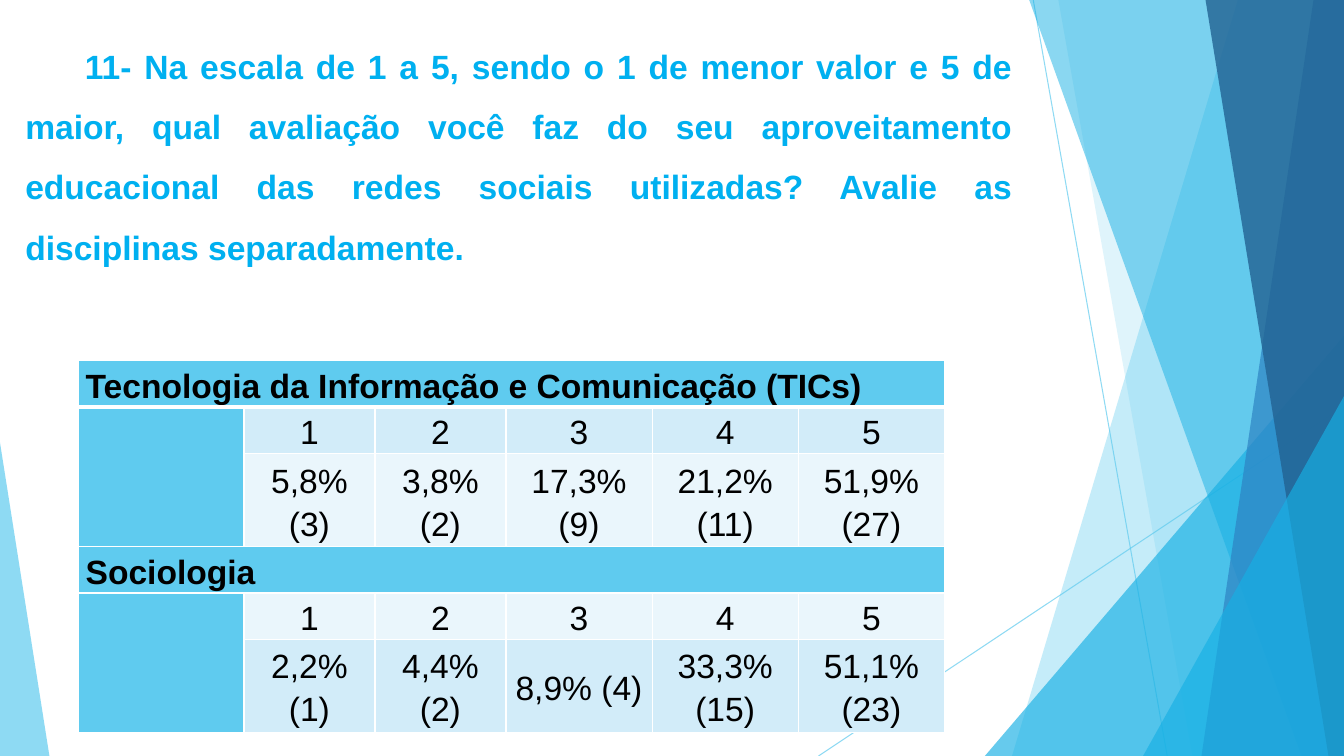
from dataclasses import dataclass

from lxml import etree
from pptx import Presentation
from pptx.dml.color import RGBColor
from pptx.enum.shapes import MSO_CONNECTOR, MSO_SHAPE
from pptx.enum.text import MSO_ANCHOR, MSO_AUTO_SIZE, PP_ALIGN
from pptx.oxml.ns import qn
from pptx.util import Emu, Inches, Pt

TRIANGLE = MSO_SHAPE.ISOSCELES_TRIANGLE
STRAIGHT = MSO_CONNECTOR.STRAIGHT
TOP, MIDDLE = MSO_ANCHOR.TOP, MSO_ANCHOR.MIDDLE
GROW = MSO_AUTO_SIZE.SHAPE_TO_FIT_TEXT
LEFT, CENTER, JUSTIFY = PP_ALIGN.LEFT, PP_ALIGN.CENTER, PP_ALIGN.JUSTIFY

WIDTH, HEIGHT = Inches(13.333), Inches(7.5)
TITLE_ONLY = 5


@dataclass(frozen=True)
class Theme:
    font: str = "Arial"
    size: int = 24
    title: str = "00B0F0"
    text: str = "000000"
    sky: str = "5FCBEF"
    cyan: str = "17B0E4"
    blue: str = "2E83C3"
    navy: str = "226292"
    band_dark: str = "D2ECF9"
    band_light: str = "EAF6FC"
    border: str = "FFFFFF"


THEME = Theme()


# All positions below are percentages of the slide's width and height.
@dataclass(frozen=True)
class Ray:
    x1: float
    y1: float
    x2: float
    y2: float


@dataclass(frozen=True)
class Panel:
    """Full-height panel that reaches the right edge."""
    top_x: float
    bottom_x: float
    color: str
    opacity: int


@dataclass(frozen=True)
class Corner:
    """Triangle standing on the bottom edge; apex 0 is left, 1 is right."""
    left: float
    top: float
    width: float
    apex: int
    color: str
    opacity: int


@dataclass(frozen=True)
class Survey:
    subject: str
    answers: tuple[str, ...]
    scale_fill: str
    answer_fill: str


RAYS = [Ray(76.88, 0, 86.85, 100), Ray(100, 53.73, 60.9, 100)]
BACKDROP = [
    Panel(92.1, 75.3, THEME.sky, 36),
    Panel(78.75, 88.73, THEME.sky, 20),
    Corner(73.28, 44.4, 26.72, 1, THEME.cyan, 66),
    Panel(76.58, 96.83, THEME.cyan, 50),
    Panel(97.73, 89.4, THEME.blue, 70),
    Panel(89.7, 98.85, THEME.navy, 80),
    Corner(85.05, 52.4, 14.95, 1, THEME.cyan, 66),
    Corner(0, 58.53, 3.68, 0, THEME.sky, 70),
]
QUESTION = (
    "11- Na escala de 1 a 5, sendo o 1 de menor valor e 5 de maior, qual avaliação "
    "você faz do seu aproveitamento educacional das redes sociais utilizadas? "
    "Avalie as disciplinas separadamente."
)
SURVEYS = [
    Survey("Tecnologia da Informação e Comunicação (TICs)",
           ("5,8% (3)", "3,8% (2)", "17,3% (9)", "21,2% (11)", "51,9% (27)"),
           THEME.band_dark, THEME.band_light),
    Survey("Sociologia",
           ("2,2% (1)", "4,4% (2)", "8,9% (4)", "33,3% (15)", "51,1% (23)"),
           THEME.band_light, THEME.band_dark),
]
COLUMNS = [12.3, 9.75, 9.75, 10.88, 10.88, 10.88]
SURVEY_ROWS = [6.1, 6.1, 12.3]


def across(percent: float) -> Emu:
    return Emu(round(WIDTH * percent / 100))


def down(percent: float) -> Emu:
    return Emu(round(HEIGHT * percent / 100))


def set_opacity(shape, percent: int) -> None:
    for color in shape.element.spPr.iter(qn("a:srgbClr")):
        etree.SubElement(color, qn("a:alpha")).set("val", str(percent * 1000))


def draw_ray(slide, ray: Ray) -> None:
    line = slide.shapes.add_connector(
        STRAIGHT, across(ray.x1), down(ray.y1), across(ray.x2), down(ray.y2))
    line.line.color.rgb = RGBColor.from_string(THEME.sky)
    line.line.width = Pt(0.75)
    set_opacity(line, 70)
    etree.SubElement(line.element.spPr, qn("a:effectLst"))


def draw_backdrop(slide, part: Panel | Corner) -> None:
    if isinstance(part, Panel):
        builder = slide.shapes.build_freeform(across(part.top_x), 0)
        builder.add_line_segments(
            [(WIDTH, 0), (WIDTH, HEIGHT), (across(part.bottom_x), HEIGHT)])
        shape = builder.convert_to_shape()
    else:
        shape = slide.shapes.add_shape(
            TRIANGLE, across(part.left), down(part.top),
            across(part.width), down(100 - part.top))
        shape.adjustments[0] = part.apex
    shape.shadow.inherit = False
    shape.fill.solid()
    shape.fill.fore_color.rgb = RGBColor.from_string(part.color)
    shape.line.fill.background()
    set_opacity(shape, part.opacity)


def write(paragraph, text: str, color: str, bold: bool, align, spacing: float) -> None:
    paragraph.alignment = align
    paragraph.line_spacing = spacing
    run = paragraph.add_run()
    run.text = text
    run.font.name, run.font.size, run.font.bold = THEME.font, Pt(THEME.size), bold
    run.font.color.rgb = RGBColor.from_string(color)


def draw_title(slide) -> None:
    title = slide.shapes.title
    title.left, title.top = across(1.13), down(2.67)
    title.width, title.height = across(74.93), down(33.6)
    frame = title.text_frame
    frame.word_wrap, frame.auto_size, frame.vertical_anchor = True, GROW, TOP
    paragraph = frame.paragraphs[0]
    write(paragraph, QUESTION, THEME.title, True, JUSTIFY, 1.5)
    properties = paragraph._p.get_or_add_pPr()
    properties.set("marL", "0")
    properties.set("indent", str(Inches(0.59)))


def style_cell(cell, fill: str, top: int, bottom: int) -> None:
    cell.fill.solid()
    cell.fill.fore_color.rgb = RGBColor.from_string(fill)
    cell.vertical_anchor = MIDDLE
    cell.margin_left = cell.margin_right = Inches(0.07)
    cell.margin_top = cell.margin_bottom = 0
    properties = cell._tc.get_or_add_tcPr()
    widths = {"a:lnL": 1, "a:lnR": 1, "a:lnT": top, "a:lnB": bottom}
    for index, (side, width) in enumerate(widths.items()):
        border = etree.Element(qn(side), w=str(Pt(width)))
        solid = etree.SubElement(border, qn("a:solidFill"))
        etree.SubElement(solid, qn("a:srgbClr")).set("val", THEME.border)
        properties.insert(index, border)


def draw_table(slide) -> None:
    heights = SURVEY_ROWS * len(SURVEYS)
    table = slide.shapes.add_table(
        len(heights), len(COLUMNS), across(5.85), down(47.73),
        across(sum(COLUMNS)), down(sum(heights))).table
    table.first_row = table.horz_banding = False
    for column, width in zip(table.columns, COLUMNS):
        column.width = across(width)
    for row, height in zip(table.rows, heights):
        row.height = down(height)

    for number, survey in enumerate(SURVEYS):
        first = number * len(SURVEY_ROWS)
        last_column = len(COLUMNS) - 1
        fills = (THEME.sky, survey.scale_fill, survey.answer_fill)
        for offset, fill in enumerate(fills):
            row = first + offset
            for column in range(len(COLUMNS)):
                style_cell(table.cell(row, column), fill if column else THEME.sky,
                           top=3 if row == 1 else 1, bottom=3 if row == 0 else 1)
        table.cell(first, 0).merge(table.cell(first, last_column))
        table.cell(first + 1, 0).merge(table.cell(first + 2, 0))
        write(table.cell(first, 0).text_frame.paragraphs[0],
              survey.subject, THEME.text, True, LEFT, 1.15)
        for score, answer in enumerate(survey.answers, start=1):
            for offset, text in ((1, str(score)), (2, answer)):
                write(table.cell(first + offset, score).text_frame.paragraphs[0],
                      text, THEME.text, False, CENTER, 1.15)


def main() -> None:
    presentation = Presentation()
    presentation.slide_width, presentation.slide_height = WIDTH, HEIGHT
    slide = presentation.slides.add_slide(presentation.slide_layouts[TITLE_ONLY])
    # Backdrop
    for ray in RAYS:
        draw_ray(slide, ray)
    for part in BACKDROP:
        draw_backdrop(slide, part)
    # Content
    draw_title(slide)
    draw_table(slide)
    presentation.save("out.pptx")


if __name__ == "__main__":
    main()
